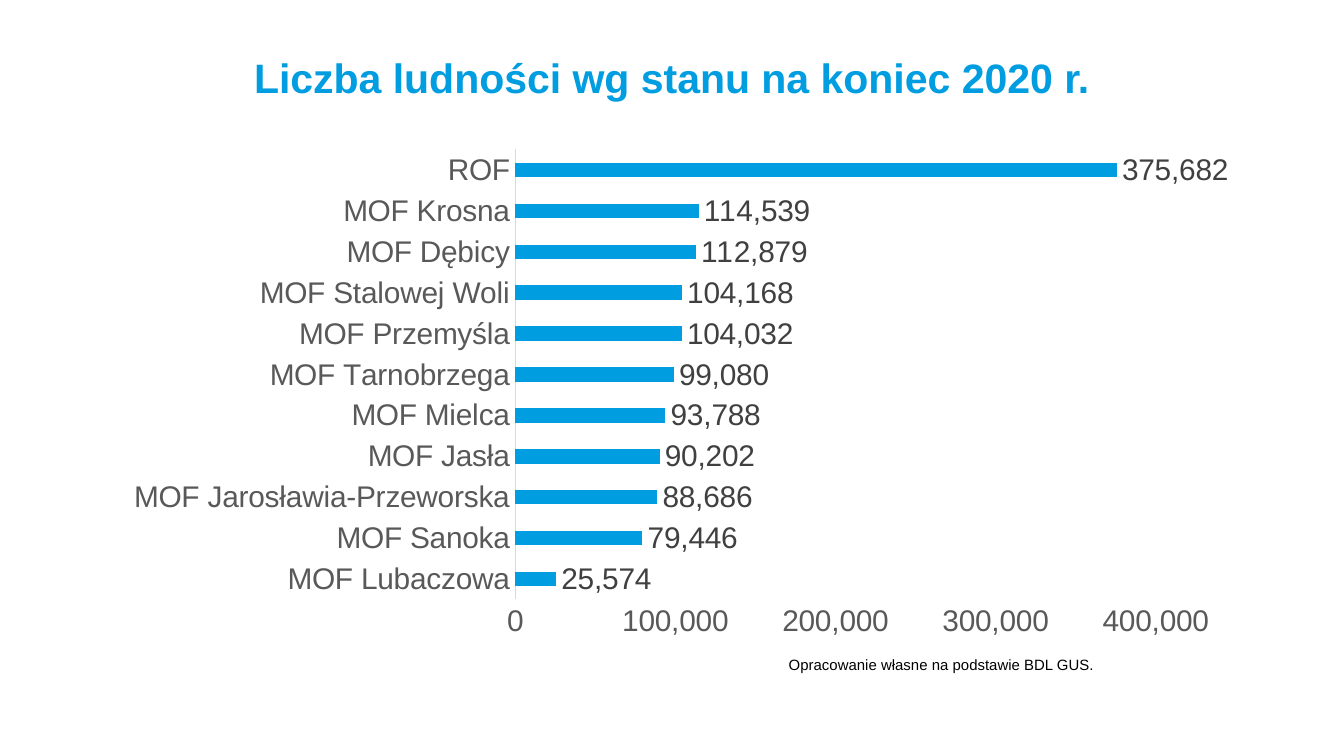
from dataclasses import dataclass
from lxml import etree
from pptx import Presentation, util as u
from pptx.chart.data import CategoryChartData
from pptx.dml.color import RGBColor
from pptx.enum import chart as ch, text as tx
from pptx.oxml.ns import qn

WIDE = u.Inches(10)
HIGH = u.Emu(WIDE * 9 // 16)


@dataclass(frozen=True)
class Theme:
    face: str = "Arial"
    blue: str = "009DE0"
    black: str = "000000"
    axis: str = "595959"
    label: str = "404040"
    rule: str = "D9D9D9"
    head: int = 22
    body: int = 16
    note: int = 8


@dataclass(frozen=True)
class Area:
    """A rectangle in shares of the whole it lies in."""
    x: float
    y: float
    w: float
    h: float

    def place(self) -> tuple[int, ...]:
        return (int(self.x * WIDE), int(self.y * HIGH),
                int(self.w * WIDE), int(self.h * HIGH))


@dataclass(frozen=True)
class Label:
    words: str
    area: Area
    size: int
    color: str
    bold: bool
    align: tx.PP_ALIGN
    inset: tuple[float, float]
    fit: tx.MSO_AUTO_SIZE


THEME = Theme()
LABELS = (
    Label("Liczba ludności wg stanu na koniec 2020 r.",
          Area(1 / 12, 0.07, 5 / 6, 0.09), THEME.head, THEME.blue, True,
          tx.PP_ALIGN.CENTER, (0, 0), tx.MSO_AUTO_SIZE.NONE),
    Label("Opracowanie własne na podstawie BDL GUS.",
          Area(0.577, 0.859, 0.354, 0.042), THEME.note, THEME.black, False,
          tx.PP_ALIGN.LEFT, (0.1, 0.05), tx.MSO_AUTO_SIZE.SHAPE_TO_FIT_TEXT),
)
CHART = Area(1 / 12, 0.183, 5 / 6, 0.672)
PLOT = Area(0.36, 0.022, 0.572, 0.886)
PEOPLE = {
    "MOF Lubaczowa": 25574,
    "MOF Sanoka": 79446,
    "MOF Jarosławia-Przeworska": 88686,
    "MOF Jasła": 90202,
    "MOF Mielca": 93788,
    "MOF Tarnobrzega": 99080,
    "MOF Przemyśla": 104032,
    "MOF Stalowej Woli": 104168,
    "MOF Dębicy": 112879,
    "MOF Krosna": 114539,
    "ROF": 375682,
}


def apply(item, **looks) -> None:
    for name, value in looks.items():
        setattr(item, name, value)


def style(font, size: int, color: str, bold: bool = False) -> None:
    apply(font, name=THEME.face, size=u.Pt(size), bold=bold)
    font.color.rgb = RGBColor.from_string(color)


def write(slide, label: Label) -> None:
    frame = slide.shapes.add_textbox(*label.area.place()).text_frame
    side, edge = map(u.Inches, label.inset)
    apply(frame, word_wrap=True, auto_size=label.fit,
          margin_left=side, margin_right=side,
          margin_top=edge, margin_bottom=edge)
    para = frame.paragraphs[0]
    apply(para, text=label.words, alignment=label.align)
    style(para.runs[0].font, label.size, label.color, label.bold)


def fix_plot(chart, area: Area) -> None:
    """Pin the inner plot area inside the chart."""
    plot = chart.element.find(".//" + qn("c:plotArea"))
    for old in plot.findall(qn("c:layout")):
        plot.remove(old)
    layout = etree.Element(qn("c:layout"))
    manual = etree.SubElement(layout, qn("c:manualLayout"))
    parts = {"layoutTarget": "inner", "xMode": "edge", "yMode": "edge",
             "x": area.x, "y": area.y, "w": area.w, "h": area.h}
    for name, value in parts.items():
        etree.SubElement(manual, qn("c:" + name), val=str(value))
    plot.insert(0, layout)


def draw_bars(slide, people: dict[str, int]) -> None:
    data = CategoryChartData(number_format="#,##0")
    data.categories = list(people)
    data.add_series("Series 1", list(people.values()))
    chart = slide.shapes.add_chart(
        ch.XL_CHART_TYPE.BAR_CLUSTERED, *CHART.place(), data).chart
    apply(chart, has_legend=False, has_title=False)
    style(chart.font, THEME.body, THEME.black)
    fix_plot(chart, PLOT)

    for axis in (chart.category_axis, chart.value_axis):
        apply(axis, has_major_gridlines=False,
              major_tick_mark=ch.XL_TICK_MARK.NONE,
              minor_tick_mark=ch.XL_TICK_MARK.NONE)
        style(axis.tick_labels.font, THEME.body, THEME.axis)
    line = chart.category_axis.format.line
    line.width = u.Pt(0.75)
    line.color.rgb = RGBColor.from_string(THEME.rule)
    scale = chart.value_axis
    apply(scale, minimum_scale=0, maximum_scale=400000, major_unit=100000)
    scale.format.line.fill.background()
    form = dict(number_format="#,##0", number_format_is_linked=False)
    apply(scale.tick_labels, **form)

    plot = chart.plots[0]
    apply(plot, gap_width=182, vary_by_categories=False)
    bars = plot.series[0]
    fill = bars.format.fill
    fill.solid()
    fill.fore_color.rgb = RGBColor.from_string(THEME.blue)
    marks = bars.data_labels
    apply(marks, show_value=True,
          position=ch.XL_LABEL_POSITION.OUTSIDE_END, **form)
    style(marks.font, THEME.body, THEME.label)


def main() -> None:
    deck = Presentation()
    apply(deck, slide_width=WIDE, slide_height=HIGH)
    slide = deck.slides.add_slide(deck.slide_layouts[6])
    title, note = LABELS
    write(slide, title)
    draw_bars(slide, PEOPLE)
    write(slide, note)
    deck.save("out.pptx")


if __name__ == "__main__":
    main()
